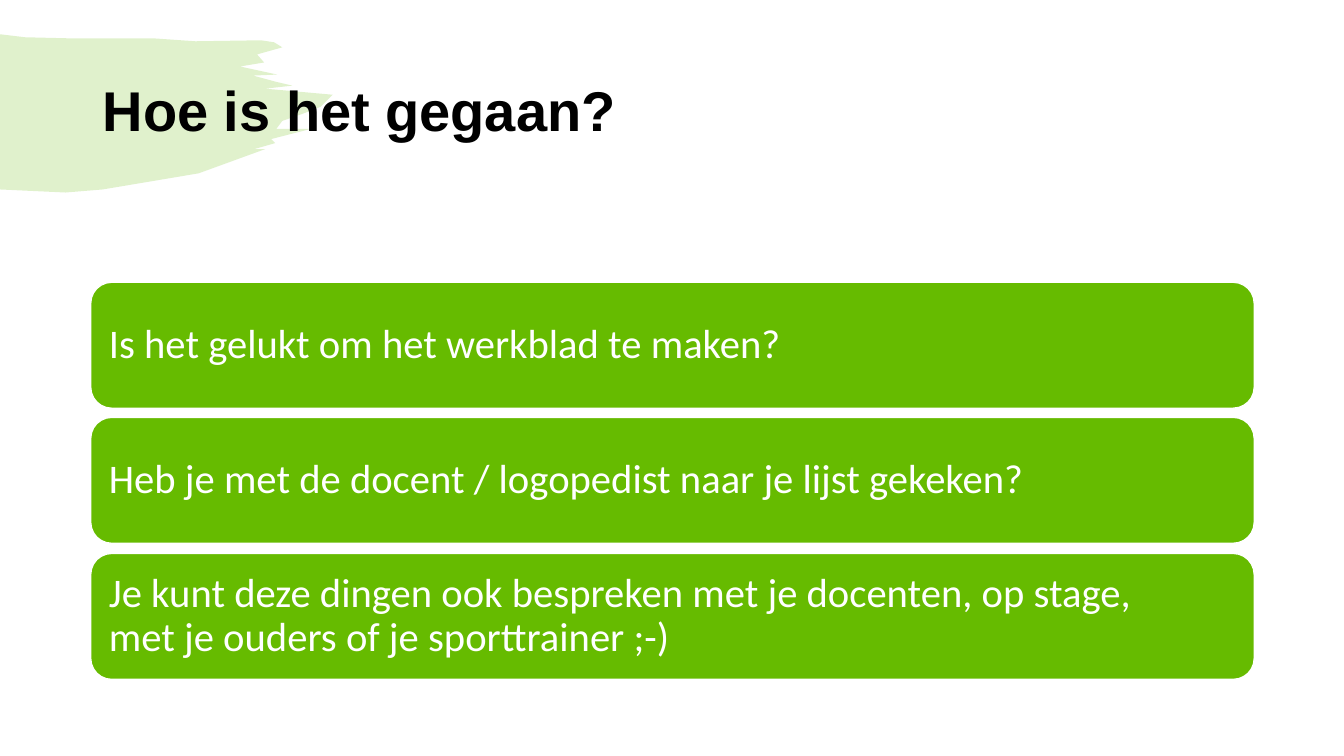
"""Build the slide that asks how the worksheet went."""
import pptx
import pptx.util
import pptx.dml.color
import pptx.enum.shapes
import pptx.enum.text
import pptx.oxml
import pptx.oxml.ns

PX = 9144
SLIDE_SIZE = (1333, 750)

THEME = {
    "green": "66BB00",
    "white": "FFFFFF",
    "black": "000000",
    "brush_opacity": 20,
    "title_font": "Arial",
    "title_size": 40,
    "body_font": "Calibri",
    "body_size": 29,
    "line_spacing": 0.9,
    "border": 1,
}

TITLE = "Hoe is het gegaan?"
TITLE_BOX = (92, 40, 1150, 145)
QUESTIONS = [
    "Is het gelukt om het werkblad te maken?",
    "Heb je met de docent / logopedist naar je lijst gekeken?",
    "Je kunt deze dingen ook bespreken met je docenten, op stage,\vmet je ouders of je sporttrainer ;-)",
]
CARD = (90, 280, 1154, 125)
LAST_CARD_TOP = 549
CARD_INSET = 12
TITLE_INSET = 10

BRUSH_OUTLINE = [
    (0, 34), (25, 37), (66, 38), (151, 38), (194, 41), (259, 40), (272, 42), (280, 47),
    (255, 54), (262, 62), (238, 66), (275, 74), (251, 75), (273, 81), (290, 85), (263, 88),
    (330, 94), (318, 106), (300, 113), (280, 120), (274, 128), (308, 128), (269, 138),
    (273, 142), (252, 148), (263, 148), (197, 172), (102, 188), (65, 191), (0, 188),
]


def color(name):
    return pptx.dml.color.RGBColor.from_string(THEME[name])


def paint(shape, name):
    shape.shadow.inherit = False
    shape.fill.solid()
    shape.fill.fore_color.rgb = color(name)


def add_brush(slide):
    builder = slide.shapes.build_freeform(*BRUSH_OUTLINE[0], scale=PX)
    builder.add_line_segments(BRUSH_OUTLINE[1:], close=True)
    shape = builder.convert_to_shape()
    paint(shape, "green")
    shape.line.fill.background()
    fill_color = shape.element.spPr.find(".//" + pptx.oxml.ns.qn("a:srgbClr"))
    alpha = pptx.oxml.parse_xml(
        f'<a:alpha {pptx.oxml.ns.nsdecls("a")} val="{THEME["brush_opacity"] * 1000}"/>'
    )
    fill_color.append(alpha)


def write_text(shape, text, *, font, size, ink, bold=False, inset, inset_y):
    frame = shape.text_frame
    frame.word_wrap = True
    frame.vertical_anchor = pptx.enum.text.MSO_ANCHOR.MIDDLE
    frame.margin_left = frame.margin_right = inset * PX
    frame.margin_top = frame.margin_bottom = inset_y * PX
    paragraph = frame.paragraphs[0]
    paragraph.text = text
    paragraph.alignment = pptx.enum.text.PP_ALIGN.LEFT
    paragraph.line_spacing = THEME["line_spacing"]
    for run in paragraph.runs:
        run.font.name = THEME[font]
        run.font.size = pptx.util.Pt(THEME[size])
        run.font.bold = bold
        run.font.color.rgb = color(ink)


def add_card(slide, question, top):
    left, _, width, height = CARD
    shape = slide.shapes.add_shape(
        pptx.enum.shapes.MSO_SHAPE.ROUNDED_RECTANGLE,
        left * PX, top * PX, width * PX, height * PX,
    )
    paint(shape, "green")
    shape.line.color.rgb = color("white")
    shape.line.width = pptx.util.Pt(THEME["border"])
    write_text(shape, question, font="body_font", size="body_size", ink="white",
               inset=CARD_INSET, inset_y=CARD_INSET)


def main():
    presentation = pptx.Presentation()
    presentation.slide_width, presentation.slide_height = (side * PX for side in SLIDE_SIZE)
    slide = presentation.slides.add_slide(presentation.slide_layouts[6])
    add_brush(slide)
    title = slide.shapes.add_textbox(*(length * PX for length in TITLE_BOX))
    write_text(title, TITLE, font="title_font", size="title_size", ink="black", bold=True,
               inset=TITLE_INSET, inset_y=TITLE_INSET // 2)
    pitch = (LAST_CARD_TOP - CARD[1]) / (len(QUESTIONS) - 1)
    for index, question in enumerate(QUESTIONS):
        add_card(slide, question, round(CARD[1] + index * pitch))
    presentation.save("out.pptx")


if __name__ == "__main__":
    main()
